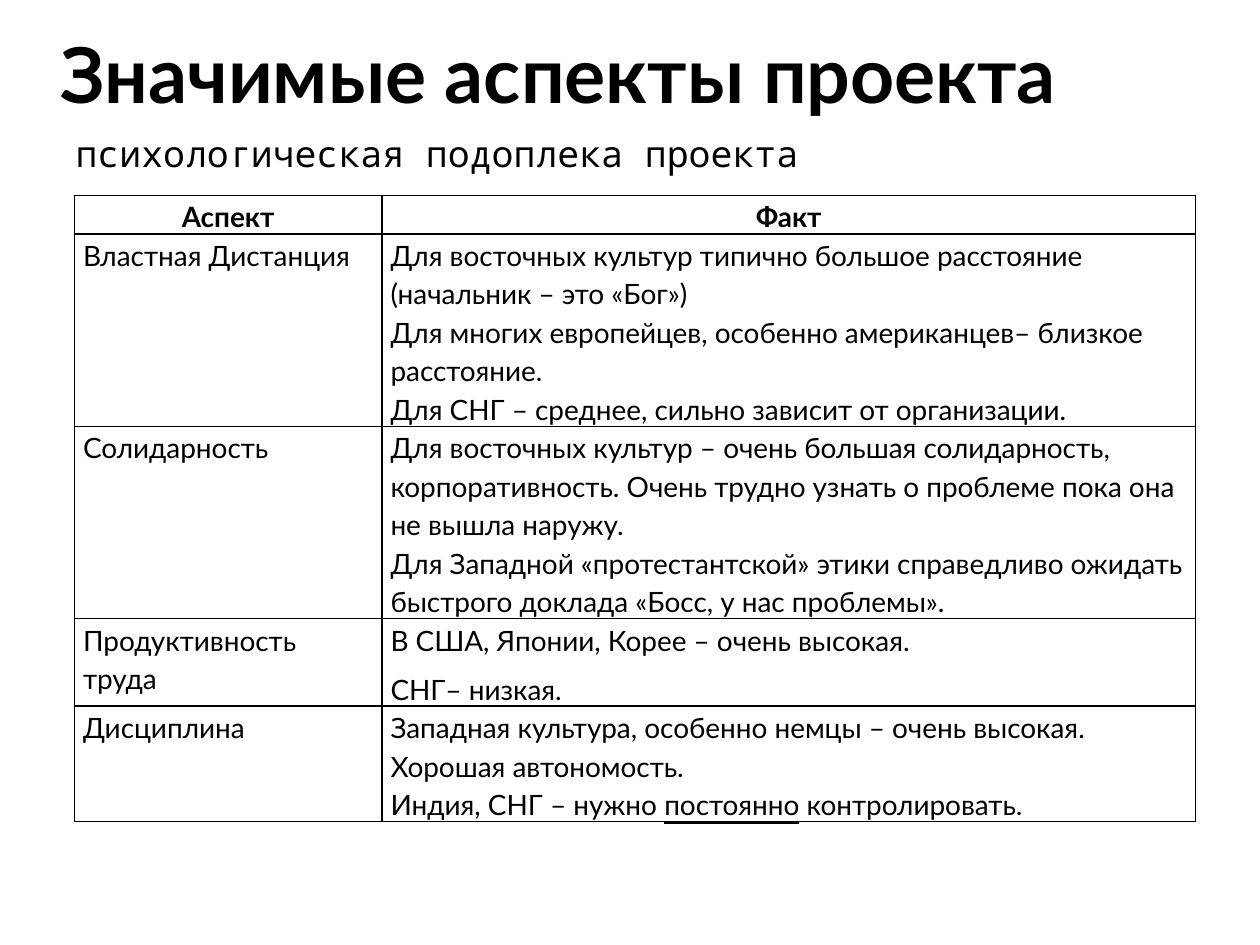
"""Build a slide with a title, a subtitle and a two-column table of project aspects."""
import pptx
import pptx.dml.color
import pptx.enum.text
import pptx.oxml
import pptx.oxml.ns
import pptx.util

Pt = pptx.util.Pt
align = pptx.enum.text.PP_ALIGN
anchor = pptx.enum.text.MSO_ANCHOR


def color(code):
    """Turn a hex string into a colour."""
    return pptx.dml.color.RGBColor.from_string(code)


def style(item, name, size, bold=False):
    """Set the font of a run or a paragraph."""
    font = item.font
    font.name, font.size, font.bold = name, Pt(size), bold
    font.color.rgb = color("000000")


deck = pptx.Presentation()
deck.slide_width, deck.slide_height = Pt(720), Pt(540)
slide = deck.slides.add_slide(deck.slide_layouts[1])
title, body = slide.placeholders

heads = [
    (title, "Значимые аспекты проекта", 0, 71.3, anchor.BOTTOM, "Lato", 44, True),
    (body, "психологическая подоплека проекта", 71.3, 28.8, anchor.TOP, "Noto Sans Mono", 20.9, False),
]
for shape, text, top, high, place, name, size, bold in heads:
    shape.left, shape.top, shape.width, shape.height = Pt(27.4), Pt(top), Pt(661.7), Pt(high)
    frame = shape.text_frame
    frame.text = text
    frame.word_wrap = True
    frame.auto_size = pptx.enum.text.MSO_AUTO_SIZE.NONE
    frame.vertical_anchor = place
    para = frame.paragraphs[0]
    para.alignment = align.LEFT
    para.space_before = Pt(0)
    if shape is body:
        props = para._p.get_or_add_pPr()
        props.set("marL", str(Pt(28.8)))
        props.set("indent", str(Pt(-20.2)))
        props.append(pptx.oxml.parse_xml(f'<a:buNone {pptx.oxml.ns.nsdecls("a")}/>'))
    style(para.runs[0], name, size, bold)

rows = [
    (22, "Аспект", ["Факт"]),
    (110, "Властная Дистанция", [
        "Для восточных культур типично большое расстояние (начальник – это «Бог»)",
        "Для многих европейцев, особенно американцев– близкое расстояние.",
        "Для СНГ – среднее, сильно зависит от организации."]),
    (110, "Солидарность", [
        "Для восточных культур – очень большая солидарность, корпоративность. "
        "Очень трудно узнать о проблеме пока она не вышла наружу.",
        "Для Западной «протестантской» этики справедливо ожидать быстрого доклада «Босс, у нас проблемы»."]),
    (50, "Продуктивность труда", [
        "В США, Японии, Корее – очень высокая.",
        "СНГ– низкая."]),
    (66, "Дисциплина", [
        "Западная культура, особенно немцы – очень высокая. Хорошая автономость.",
        "Индия, СНГ – нужно *постоянно* контролировать."]),
]
wide = [175.7, 465.1]
high = sum(row[0] for row in rows)
table = slide.shapes.add_table(len(rows), 2, Pt(42.5), Pt(111.6), Pt(sum(wide)), Pt(high)).table
table.first_row = table.horz_banding = False
for col, width in zip(table.columns, wide):
    col.width = Pt(width)

for r, (tall, aspect, facts) in enumerate(rows):
    table.rows[r].height = Pt(tall)
    for c, lines in enumerate([[aspect], facts]):
        cell = table.cell(r, c)
        cell.margin_left = cell.margin_right = Pt(5)
        cell.margin_top = cell.margin_bottom = Pt(0)
        for side in "LRTB":
            cell._tc.get_or_add_tcPr().append(pptx.oxml.parse_xml(
                f'<a:ln{side} {pptx.oxml.ns.nsdecls("a")} w="{Pt(1)}">'
                f'<a:solidFill><a:srgbClr val="000000"/></a:solidFill></a:ln{side}>'))
        cell.fill.background()
        frame = cell.text_frame
        for n, line in enumerate(lines):
            para = frame.add_paragraph() if n else frame.paragraphs[0]
            para.alignment = align.LEFT if r else align.CENTER
            para.line_spacing = 1.15
            if line == "СНГ– низкая.":
                para.space_before = para.space_after = Pt(6)
            for k, part in enumerate(line.split("*")):
                run = para.add_run()
                run.text = part
                style(run, "Lato", 16, r == 0)
                run.font.underline = k == 1

deck.save("out.pptx")
